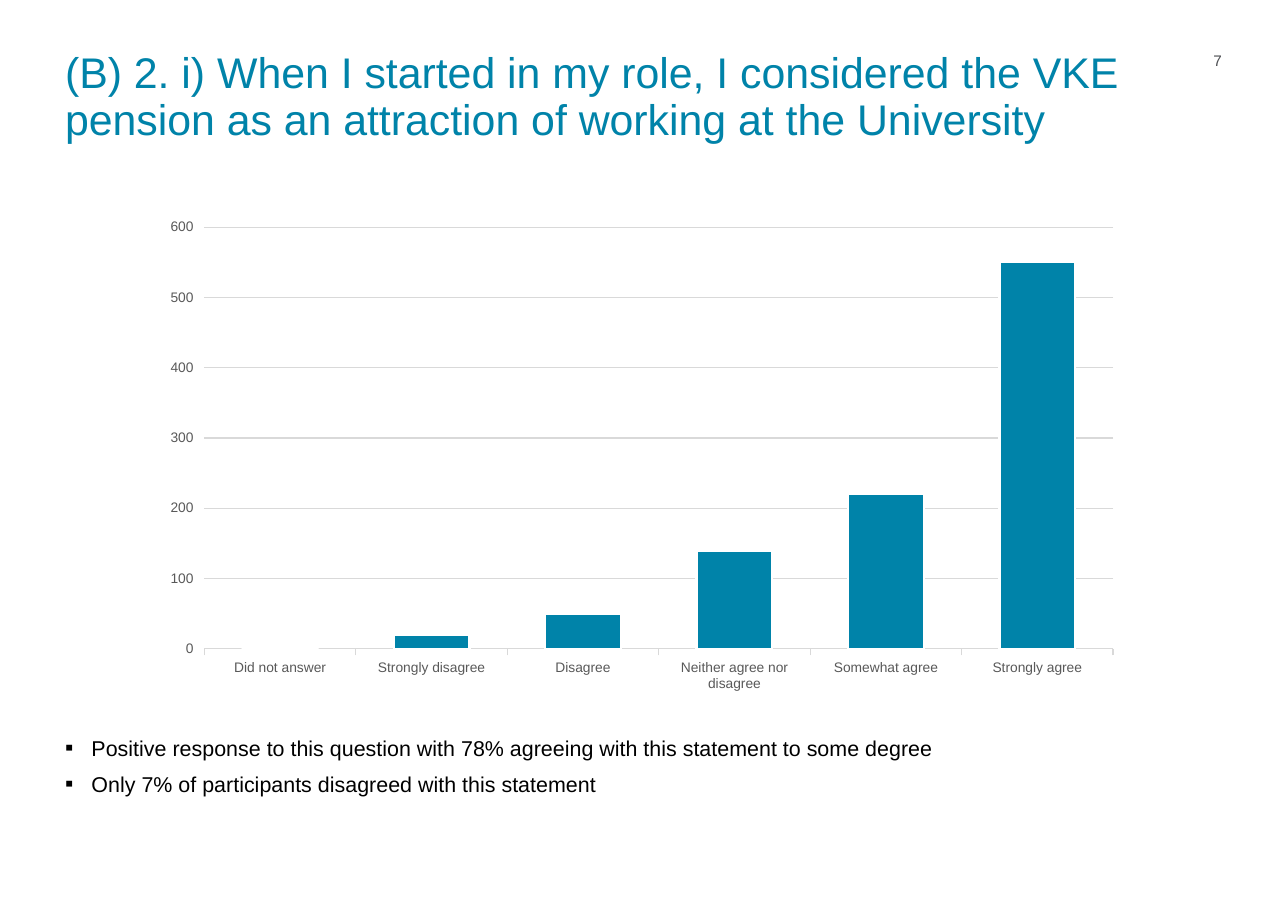
from lxml import etree
from pptx import Presentation
from pptx.chart.data import CategoryChartData
from pptx.dml.color import RGBColor
from pptx.enum.chart import XL_CHART_TYPE, XL_TICK_MARK
from pptx.enum.text import PP_ALIGN
from pptx.oxml.ns import qn
from pptx.util import Inches, Pt

COLUMN = XL_CHART_TYPE.COLUMN_CLUSTERED
OUTSIDE = XL_TICK_MARK.OUTSIDE
LEFT, RIGHT = PP_ALIGN.LEFT, PP_ALIGN.RIGHT
TEAL = RGBColor(0x00, 0x83, 0xA9)
BLACK = RGBColor(0x00, 0x00, 0x00)
WHITE = RGBColor(0xFF, 0xFF, 0xFF)
LABEL = RGBColor(0x59, 0x59, 0x59)
GRID = RGBColor(0xD9, 0xD9, 0xD9)
SLATE = RGBColor(0x4D, 0x4F, 0x53)
FONT = "Arial"

prs = Presentation()
prs.slide_width, prs.slide_height = Inches(11.69), Inches(8.27)
COL, ROW = prs.slide_width / 100, prs.slide_height / 100
s = prs.slides.add_slide(prs.slide_layouts[6])


def place(x, y, w, h):
    return int(x * COL), int(y * ROW), int(w * COL), int(h * ROW)


def add_text(area, lines, size, color, spacing, align=LEFT, bullet=None):
    tf = s.shapes.add_textbox(*place(*area)).text_frame
    tf.word_wrap = True
    tf.margin_left = tf.margin_right = tf.margin_top = tf.margin_bottom = 0
    for i, line in enumerate(lines):
        p = tf.paragraphs[0] if i == 0 else tf.add_paragraph()
        if bullet:
            pPr = p._p.get_or_add_pPr()
            pPr.set("marL", str(Inches(0.24)))
            pPr.set("indent", str(-Inches(0.24)))
            clr = etree.SubElement(pPr, qn("a:buClr"))
            etree.SubElement(clr, qn("a:srgbClr"), val=str(color))
            etree.SubElement(pPr, qn("a:buSzPct"), val="110000")
            etree.SubElement(pPr, qn("a:buFont"), typeface=FONT)
            etree.SubElement(pPr, qn("a:buChar"), char=bullet)
        p.alignment = align
        p.line_spacing = spacing
        if i:
            p.space_before = Pt(6)
        r = p.add_run()
        r.text = line
        r.font.name, r.font.size = FONT, Pt(size)
        r.font.color.rgb = color


add_text((5.05, 5.68, 84.86, 10.04),
         ["(B) 2. i) When I started in my role, I considered the VKE "
          "pension as an attraction of working at the University"], 28, TEAL, 0.9)
add_text((91.53, 5.8, 3.34, 2.42), ["7"], 10, SLATE, 0.9, RIGHT)

responses = {
    "Did not answer": 0,
    "Strongly disagree": 20,
    "Disagree": 50,
    "Neither agree nor disagree": 140,
    "Somewhat agree": 220,
    "Strongly agree": 550,
}
data = CategoryChartData()
data.categories = list(responses)
data.add_series("Series 1", list(responses.values()))
chart = s.shapes.add_chart(COLUMN, *place(11.72, 22.97, 76.22, 54.05), data).chart
chart.has_legend = chart.has_title = False
chart.font.name, chart.font.size = FONT, Pt(10)
chart.font.color.rgb = BLACK

plot = chart.plots[0]
plot.gap_width = 100
plot.vary_by_categories = False
bars = plot.series[0]
bars.invert_if_negative = False
bars.format.fill.solid()
bars.format.fill.fore_color.rgb = TEAL
bars.format.line.color.rgb = WHITE
bars.format.line.width = Pt(1.5)

cat_axis, val_axis = chart.category_axis, chart.value_axis
for axis in (cat_axis, val_axis):
    axis.major_tick_mark = OUTSIDE
    font = axis.tick_labels.font
    font.name, font.size = FONT, Pt(9)
    font.color.rgb = LABEL
val_axis.minimum_scale, val_axis.maximum_scale, val_axis.major_unit = 0, 600, 100
val_axis.format.line.fill.background()
val_axis.has_major_gridlines = True
for line in (cat_axis.format.line, val_axis.major_gridlines.format.line):
    line.color.rgb = GRID
    line.width = Pt(0.75)

add_text((5.05, 80.53, 89.91, 19.47),
         ["Positive response to this question with 78% agreeing with this "
          "statement to some degree",
          "Only 7% of participants disagreed with this statement"],
         14, BLACK, 1.05, bullet="▪")

prs.save("out.pptx")
